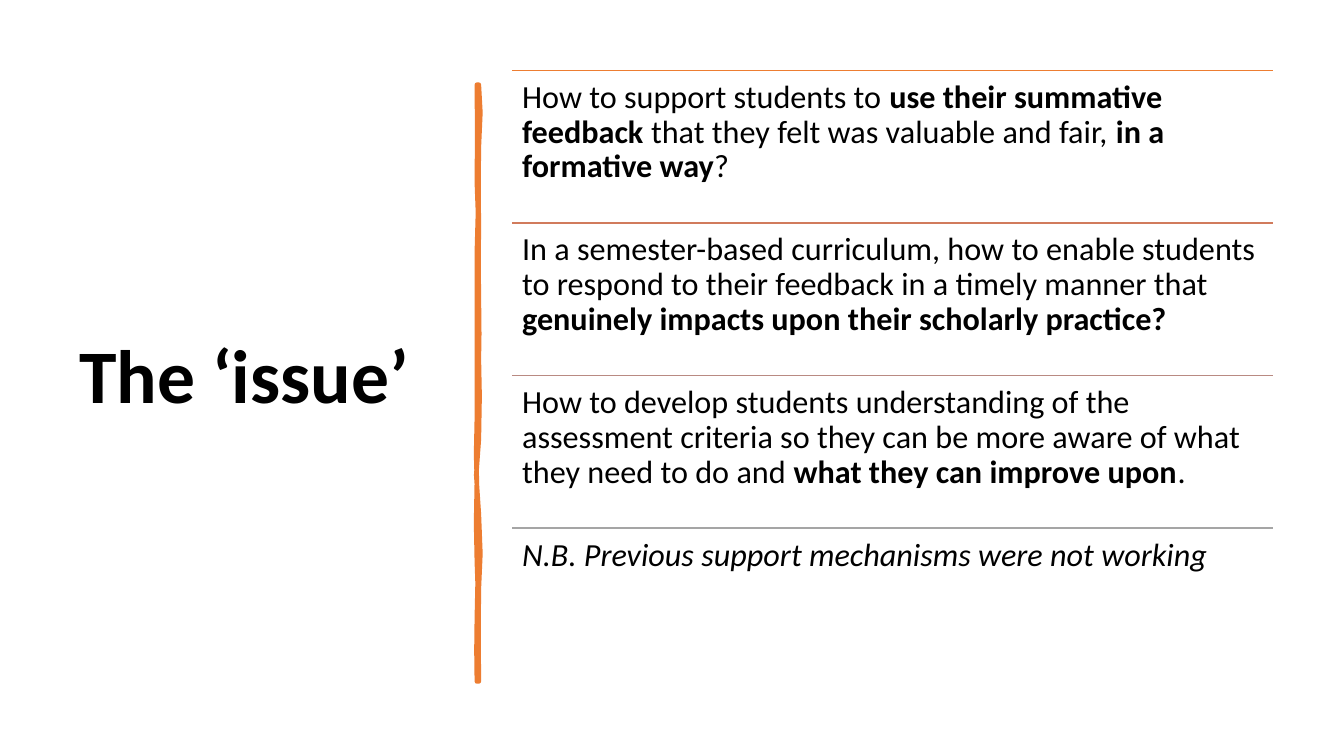
import pptx
import pptx.dml.color
import pptx.enum.shapes
import pptx.enum.text
import pptx.oxml
import pptx.oxml.ns
import pptx.util
from pptx.util import Inches

FONT = "Calibri"
BLACK = "000000"
ORANGE = "ED7D31"
LIST_LEFT, LIST_TOP, LIST_WIDTH = 5.08, 0.7, 7.55
ROW_HEIGHT = 4.54 / 3

ISSUES = [
    ("ED7D31", [("How to support students to ", ""),
                ("use their summative feedback ", "b"),
                ("that they felt was valuable and fair, ", ""),
                ("in a formative way", "b"),
                ("?", "")]),
    ("D17B5C", [("In a semester-based curriculum, how to enable students to respond "
                 "to their feedback in a timely manner that ", ""),
                ("genuinely impacts upon their scholarly practice?", "b")]),
    ("B98A82", [("How to develop students understanding of the assessment criteria so "
                 "they can be more aware of what they need to do and ", ""),
                ("what they can improve upon", "b"),
                (". ", "")]),
    ("A5A5A5", [("N.B. Previous support mechanisms were not working", "i")]),
]

STROKE_START = (4.75, 0.84)
STROKE_CURVES = [
    ((4.77, 1.02), (4.77, 1.19), (4.75, 1.46)),
    ((4.73, 1.73), (4.76, 1.95), (4.75, 2.26)),
    ((4.74, 2.57), (4.75, 2.62), (4.75, 2.94)),
    ((4.74, 3.25), (4.77, 3.42), (4.75, 3.56)),
    ((4.73, 3.7), (4.79, 4.14), (4.75, 4.36)),
    ((4.71, 4.57), (4.72, 4.84), (4.75, 5.1)),
    ((4.77, 5.36), (4.77, 5.64), (4.75, 5.84)),
    ((4.73, 6.03), (4.76, 6.5), (4.75, 6.76)),
    ((4.74, 6.76), (4.73, 6.76), (4.73, 6.76)),
    ((4.74, 6.46), (4.71, 6.44), (4.73, 6.13)),
    ((4.74, 5.83), (4.74, 5.7), (4.73, 5.57)),
    ((4.72, 5.44), (4.72, 4.95), (4.73, 4.77)),
    ((4.73, 4.59), (4.71, 4.45), (4.73, 4.15)),
    ((4.74, 3.86), (4.72, 3.73), (4.73, 3.35)),
    ((4.74, 2.98), (4.72, 2.81), (4.73, 2.5)),
    ((4.74, 2.18), (4.75, 2), (4.73, 1.81)),
    ((4.7, 1.63), (4.77, 1.04), (4.73, 0.84)),
]


def color(value):
    """Return the colour for a hex string."""
    return pptx.dml.color.RGBColor.from_string(value)


def curve_points(start, curves, steps=2):
    """Return points sampled along a chain of cubic curves."""
    points = []
    for first, second, end in curves:
        for step in range(1, steps + 1):
            t = step / steps
            u = 1 - t
            points.append(tuple(
                Inches(u**3 * a + 3 * u * u * t * b + 3 * u * t * t * c + t**3 * d)
                for a, b, c, d in zip(start, first, second, end)))
        start = end
    return points


def add_brush_stroke(page):
    """Draw the uneven vertical divider."""
    builder = page.shapes.build_freeform(*map(Inches, STROKE_START))
    builder.add_line_segments(curve_points(STROKE_START, STROKE_CURVES), close=True)
    stroke = builder.convert_to_shape()
    stroke.shadow.inherit = False
    stroke.fill.solid()
    stroke.fill.fore_color.rgb = color(ORANGE)
    stroke.line.color.rgb = color(ORANGE)
    stroke.line.width = pptx.util.Pt(3.25)
    outline = stroke._element.spPr.find(pptx.oxml.ns.qn("a:ln"))
    outline.append(pptx.oxml.parse_xml(f"<a:round {pptx.oxml.ns.nsdecls('a')}/>"))


def add_rule(page, top, line_color):
    """Draw a horizontal rule across the list."""
    rule = page.shapes.add_connector(
        pptx.enum.shapes.MSO_CONNECTOR.STRAIGHT, Inches(LIST_LEFT), Inches(top),
        Inches(LIST_LEFT + LIST_WIDTH), Inches(top))
    rule.line.color.rgb = color(line_color)
    rule.line.width = pptx.util.Pt(1)
    rule._element.spPr.append(
        pptx.oxml.parse_xml(f"<a:effectLst {pptx.oxml.ns.nsdecls('a')}/>"))


def add_text(page, bounds, spans, size, anchor, inset):
    """Add one paragraph of styled runs in a text box."""
    box = page.shapes.add_textbox(*map(Inches, bounds))
    frame = box.text_frame
    frame.word_wrap = True
    frame.vertical_anchor = anchor
    frame.margin_left = frame.margin_right = Inches(0.1)
    frame.margin_top = frame.margin_bottom = Inches(inset)
    para = frame.paragraphs[0]
    para.line_spacing = 0.9
    for text, style in spans:
        span = para.add_run()
        span.text = text
        span.font.name = FONT
        span.font.size = pptx.util.Pt(size)
        span.font.color.rgb = color(BLACK)
        span.font.bold = style == "b"
        span.font.italic = style == "i"


def main():
    """Build and save the slide."""
    deck = pptx.Presentation()
    deck.slide_width, deck.slide_height = Inches(13.33), Inches(7.5)
    page = deck.slides.add_slide(deck.slide_layouts[6])
    anchors = pptx.enum.text.MSO_ANCHOR
    add_text(page, (0.69, 0.7, 3.74, 6.11), [("The ‘issue’", "b")],
             54, anchors.MIDDLE, 0.05)
    add_brush_stroke(page)
    for index, (line_color, spans) in enumerate(ISSUES):
        top = LIST_TOP + index * ROW_HEIGHT
        add_rule(page, top, line_color)
        add_text(page, (LIST_LEFT, top, LIST_WIDTH, ROW_HEIGHT), spans,
                 23, anchors.TOP, 0.1)
    deck.save("out.pptx")


if __name__ == "__main__":
    main()
